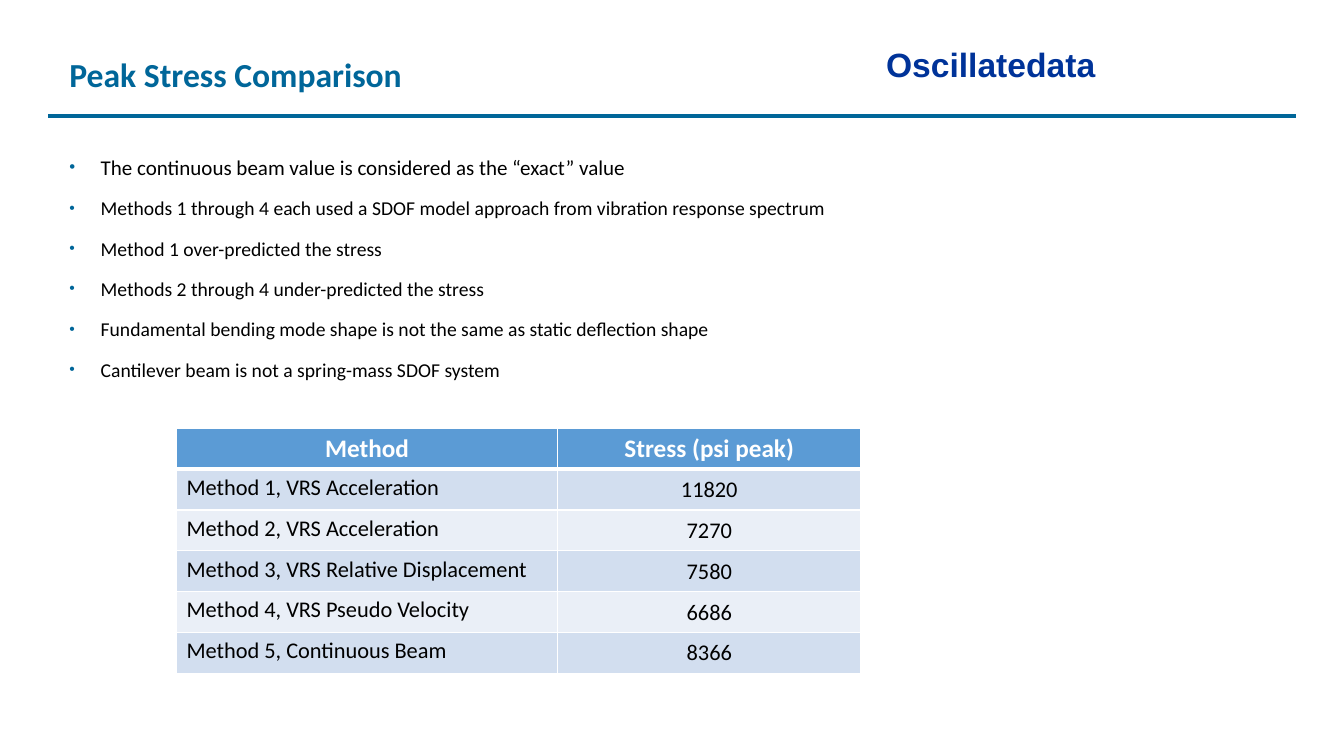
from dataclasses import dataclass
from typing import Any

from lxml.etree import SubElement
from pptx import Presentation
from pptx.dml.color import RGBColor
from pptx.enum.shapes import MSO_CONNECTOR
from pptx.enum.text import MSO_ANCHOR, MSO_AUTO_SIZE, PP_ALIGN
from pptx.oxml.ns import qn
from pptx.slide import Slide
from pptx.table import _Cell
from pptx.text.text import TextFrame, _Paragraph
from pptx.util import Inches, Pt


@dataclass(frozen=True)
class Theme:
    """Colours, fonts and type sizes of the slide."""

    accent: str = "006699"
    brand: str = "003399"
    ink: str = "000000"
    white: str = "FFFFFF"
    header: str = "5B9BD5"
    bands: tuple[str, str] = ("D2DEEF", "EAEFF7")
    body_font: str = "Calibri"
    brand_font: str = "Arial"
    heading_size: int = 24
    lead_size: int = 15
    bullet_size: int = 14
    header_size: int = 18
    cell_size: int = 16


@dataclass(frozen=True)
class TextStyle:
    """Font settings of one run of text."""

    size: int
    color: str
    bold: bool = False
    font: str = "Calibri"


@dataclass(frozen=True)
class Box:
    """Place and size of an element in inches."""

    left: float
    top: float
    width: float
    height: float


@dataclass(frozen=True)
class Heading:
    """A one-line heading with its place."""

    text: str
    box: Box
    style: TextStyle
    wrap: bool


@dataclass(frozen=True)
class StressResult:
    """Peak stress found by one method."""

    method: str
    stress: int


THEME = Theme()
HEADINGS = (
    Heading("Oscillatedata", Box(8.69, 0.39, 2.33, 0.5),
            TextStyle(THEME.heading_size, THEME.brand, True, THEME.brand_font), False),
    Heading("Peak Stress Comparison", Box(0.59, 0.49, 4.75, 0.5),
            TextStyle(THEME.heading_size, THEME.accent, True, THEME.body_font), True),
)
FINDINGS = (
    "The continuous beam value is considered as the “exact” value",
    "Methods 1 through 4 each used a SDOF model approach from vibration response spectrum",
    "Method 1 over-predicted the stress",
    "Methods 2 through 4 under-predicted the stress",
    "Fundamental bending mode shape is not the same as static deflection shape",
    "Cantilever beam is not a spring-mass SDOF system",
)
RESULTS = (
    StressResult("Method 1, VRS Acceleration", 11820),
    StressResult("Method 2, VRS Acceleration", 7270),
    StressResult("Method 3, VRS Relative Displacement", 7580),
    StressResult("Method 4, VRS Pseudo Velocity", 6686),
    StressResult("Method 5, Continuous Beam", 8366),
)
COLUMN_WIDTHS = (3.78, 3.01)


def apply_format(target: Any, values: dict[str, Any]) -> None:
    """Set each named attribute on the target."""
    for name, value in values.items():
        setattr(target, name, value)


def write_text(paragraph: _Paragraph, text: str, style: TextStyle) -> None:
    """Add one styled run to a paragraph."""
    run = paragraph.add_run()
    run.text = text
    apply_format(run.font, {"size": Pt(style.size), "bold": style.bold, "name": style.font})
    run.font.color.rgb = RGBColor.from_string(style.color)


def add_text_frame(slide: Slide, box: Box, wrap: bool = True) -> TextFrame:
    """Add a text box that grows with its text."""
    shape = slide.shapes.add_textbox(
        Inches(box.left), Inches(box.top), Inches(box.width), Inches(box.height))
    apply_format(shape.text_frame,
                 {"word_wrap": wrap, "auto_size": MSO_AUTO_SIZE.SHAPE_TO_FIT_TEXT})
    return shape.text_frame


def add_rule(slide: Slide) -> None:
    """Draw the line under the headings."""
    connector = slide.shapes.add_connector(
        MSO_CONNECTOR.STRAIGHT, Inches(0.48), Inches(1.15), Inches(12.85), Inches(1.15))
    connector.line.color.rgb = RGBColor.from_string(THEME.accent)
    connector.line.width = Pt(2.5)
    SubElement(connector._element.spPr, qn("a:effectLst"))


def add_bullet(paragraph: _Paragraph) -> None:
    """Give a paragraph a small coloured bullet and a hanging indent."""
    properties = paragraph._p.get_or_add_pPr()
    properties.set("marL", str(Inches(0.31)))
    properties.set("indent", str(-Inches(0.31)))
    color = SubElement(properties, qn("a:buClr"))
    SubElement(color, qn("a:srgbClr"), val=THEME.accent)
    SubElement(properties, qn("a:buSzPct"), val="80000")
    SubElement(properties, qn("a:buFont"), typeface=THEME.brand_font)
    SubElement(properties, qn("a:buChar"), char="•")


def add_findings(slide: Slide) -> None:
    """Add the bulleted findings, the first slightly larger."""
    frame = add_text_frame(slide, Box(0.59, 1.48, 11.11, 2.37))
    for index, finding in enumerate(FINDINGS):
        paragraph = frame.add_paragraph() if index else frame.paragraphs[0]
        apply_format(paragraph, {"space_before": Pt(6), "space_after": Pt(6)})
        add_bullet(paragraph)
        size = THEME.bullet_size if index else THEME.lead_size
        write_text(paragraph, finding, TextStyle(size, THEME.ink, font=THEME.body_font))


def style_cell(cell: _Cell, fill: str, top: int, bottom: int) -> None:
    """Draw the white borders of a cell and fill it."""
    properties = cell._tc.get_or_add_tcPr()
    for side, width in {"L": 1, "R": 1, "T": top, "B": bottom}.items():
        line = SubElement(properties, qn(f"a:ln{side}"), w=str(Pt(width)))
        solid = SubElement(line, qn("a:solidFill"))
        SubElement(solid, qn("a:srgbClr"), val=THEME.white)
    cell.fill.solid()
    cell.fill.fore_color.rgb = RGBColor.from_string(fill)


def add_stress_table(slide: Slide) -> None:
    """Add the table of peak stress by method."""
    rows = [("Method", "Stress (psi peak)")]
    rows += [(result.method, str(result.stress)) for result in RESULTS]
    table = slide.shapes.add_table(
        len(rows), len(COLUMN_WIDTHS), Inches(1.75), Inches(4.25),
        Inches(sum(COLUMN_WIDTHS)), Inches(2.43)).table
    for column, width in zip(table.columns, COLUMN_WIDTHS):
        column.width = Inches(width)
    header_style = TextStyle(THEME.header_size, THEME.white, True, THEME.body_font)
    cell_style = TextStyle(THEME.cell_size, THEME.ink, font=THEME.body_font)
    for row, texts in enumerate(rows):
        fill = THEME.bands[(row - 1) % 2] if row else THEME.header
        for column, text in enumerate(texts):
            cell = table.cell(row, column)
            style_cell(cell, fill, 3 if row == 1 else 1, 1 if row else 3)
            paragraph = cell.text_frame.paragraphs[0]
            if row == 0 or column == 1:
                paragraph.alignment = PP_ALIGN.CENTER
            if row and column == 1:
                apply_format(cell, {
                    "vertical_anchor": MSO_ANCHOR.MIDDLE, "margin_left": Inches(0.01),
                    "margin_right": Inches(0.01), "margin_top": Inches(0.01),
                    "margin_bottom": Inches(0)})
            write_text(paragraph, text, cell_style if row else header_style)


def main() -> None:
    """Build the slide and save it."""
    presentation = Presentation()
    apply_format(presentation, {"slide_width": Inches(13.33), "slide_height": Inches(7.5)})
    slide = presentation.slides.add_slide(presentation.slide_layouts[6])
    add_rule(slide)
    for heading in HEADINGS:
        frame = add_text_frame(slide, heading.box, heading.wrap)
        write_text(frame.paragraphs[0], heading.text, heading.style)
    add_findings(slide)
    add_stress_table(slide)
    presentation.save("out.pptx")


if __name__ == "__main__":
    main()
